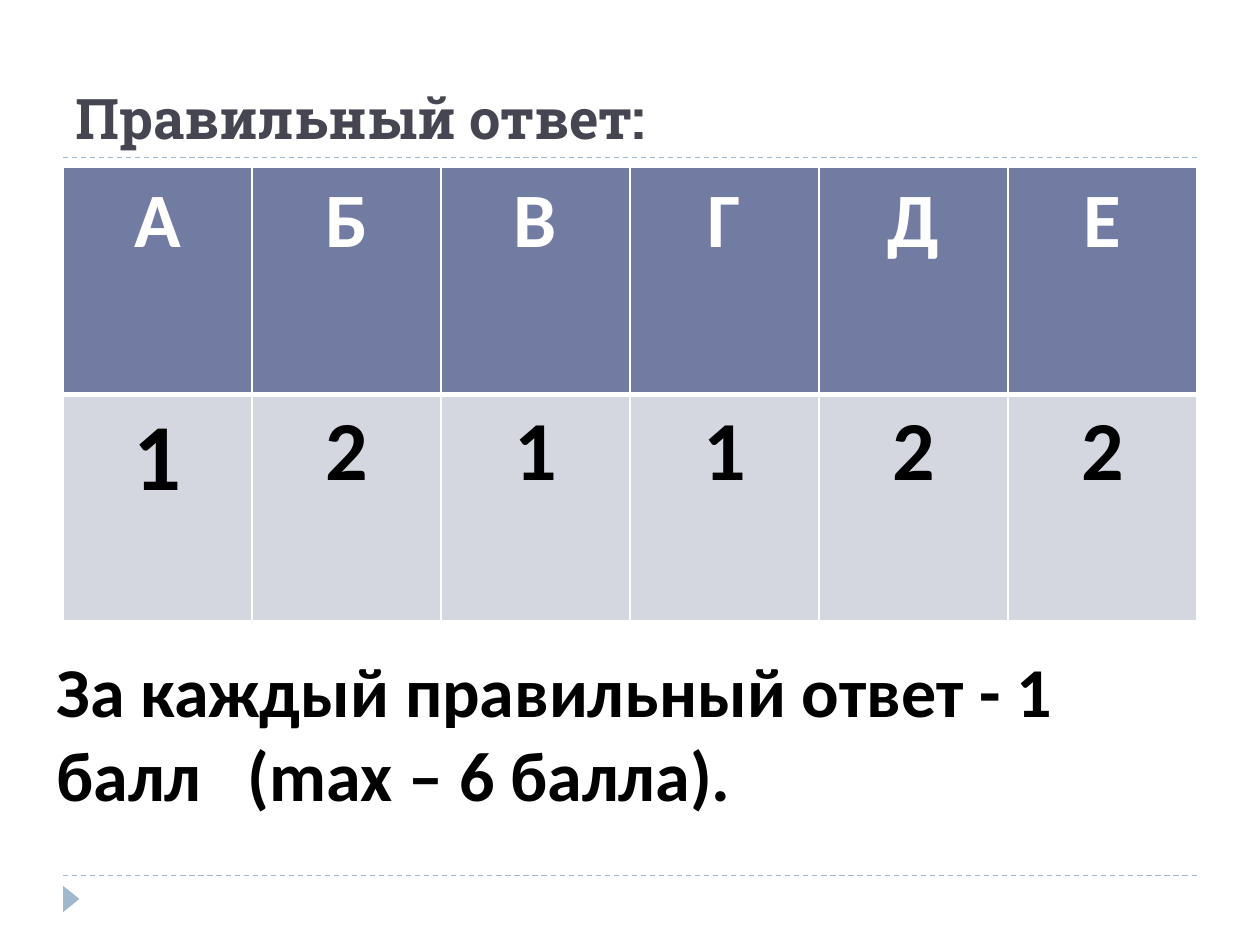
from lxml import etree
from pptx import Presentation
from pptx import util as u
from pptx.dml.color import RGBColor
from pptx.enum import dml, shapes, text
from pptx.oxml.ns import qn

WHITE = RGBColor(0xFF, 0xFF, 0xFF)
BLACK = RGBColor(0, 0, 0)
SLATE = RGBColor(0x46, 0x46, 0x53)
INDIGO = RGBColor(0x72, 0x7C, 0xA3)
PALE = RGBColor(0xD5, 0xD7, 0xE0)
SKY = RGBColor(0x9F, 0xB8, 0xCD)

LETTERS = "АБВГДЕ"
ANSWERS = "121122"


def style(para, size, color, face="Calibri"):
    for run in para.runs:
        font = run.font
        font.name, font.size, font.bold = face, u.Pt(size), True
        font.color.rgb = color


def add_rule(slide, left, top, width):
    rule = slide.shapes.add_connector(
        shapes.MSO_CONNECTOR.STRAIGHT, left, top, left + width, top)
    rule.line.color.rgb = SKY
    rule.line.width = u.Pt(0.75)
    rule.line.dash_style = dml.MSO_LINE.DASH
    etree.SubElement(rule._element.spPr, qn("a:effectLst"))


def add_footer(slide, left, top, width):
    add_rule(slide, left, top, width)
    mark = slide.shapes.add_shape(
        shapes.MSO_SHAPE.ISOSCELES_TRIANGLE, left - u.Inches(0.04),
        top + u.Inches(0.12), u.Inches(0.21), u.Inches(0.13))
    mark.rotation = 90
    mark.shadow.inherit = False
    mark.fill.solid()
    mark.fill.fore_color.rgb = SKY
    mark.line.fill.background()


def add_title(slide, left, top, width, height):
    add_rule(slide, left, top + height, width)
    title = slide.shapes.title
    title.left, title.top, title.width, title.height = left, top, width, height
    frame = title.text_frame
    frame.text = "Правильный ответ:"
    frame.vertical_anchor = text.MSO_ANCHOR.BOTTOM
    para = frame.paragraphs[0]
    para.alignment = text.PP_ALIGN.LEFT
    style(para, 32, SLATE, "Roboto Slab")


def set_edges(cell, **widths):
    props = cell._tc.get_or_add_tcPr()
    for spot, side in enumerate("LRTB"):
        edge = etree.Element(qn(f"a:ln{side}"), w=str(u.Pt(widths.get(side, 1))))
        fill = etree.SubElement(edge, qn("a:solidFill"))
        etree.SubElement(fill, qn("a:srgbClr"), val=str(WHITE))
        props.insert(spot, edge)


def fill_cell(cell, label, size, color, back):
    cell.text_frame.text = label
    para = cell.text_frame.paragraphs[0]
    para.alignment = text.PP_ALIGN.CENTER
    style(para, size, color)
    cell.fill.solid()
    cell.fill.fore_color.rgb = back


def add_answers(slide, left, top, width, height):
    table = slide.shapes.add_table(
        2, len(LETTERS), left, top, width, height).table
    for col, (letter, answer) in enumerate(zip(LETTERS, ANSWERS)):
        head, body = table.cell(0, col), table.cell(1, col)
        fill_cell(head, letter, 44, WHITE, INDIGO)
        fill_cell(body, answer, 48 if col else 54, BLACK, PALE)
        set_edges(head, B=3)
        set_edges(body, T=3)


def add_score(slide, left, top, width, height):
    frame = slide.shapes.add_textbox(left, top, width, height).text_frame
    frame.word_wrap = True
    para = frame.paragraphs[0]
    para.text = "За каждый правильный ответ - 1 балл\t(mах – 6 балла)."
    tabs = etree.SubElement(para._p.get_or_add_pPr(), qn("a:tabLst"))
    etree.SubElement(tabs, qn("a:tab"), pos=str(u.Inches(1.52)), algn="l")
    style(para, 40, BLACK)


def main():
    deck = Presentation()
    deck.slide_width, deck.slide_height = u.Inches(10), u.Inches(7.5)
    slide = deck.slides.add_slide(deck.slide_layouts[5])
    left, width = u.Inches(0.5), u.Inches(9)
    add_footer(slide, left, u.Inches(6.95), width)
    add_title(slide, left, u.Inches(0.17), width, u.Inches(1.08))
    add_answers(slide, left, u.Inches(1.33), width, u.Inches(3.6))
    add_score(slide, u.Inches(0.35), u.Inches(5.09), u.Inches(9.13), u.Inches(1.45))
    deck.save("out.pptx")


if __name__ == "__main__":
    main()
